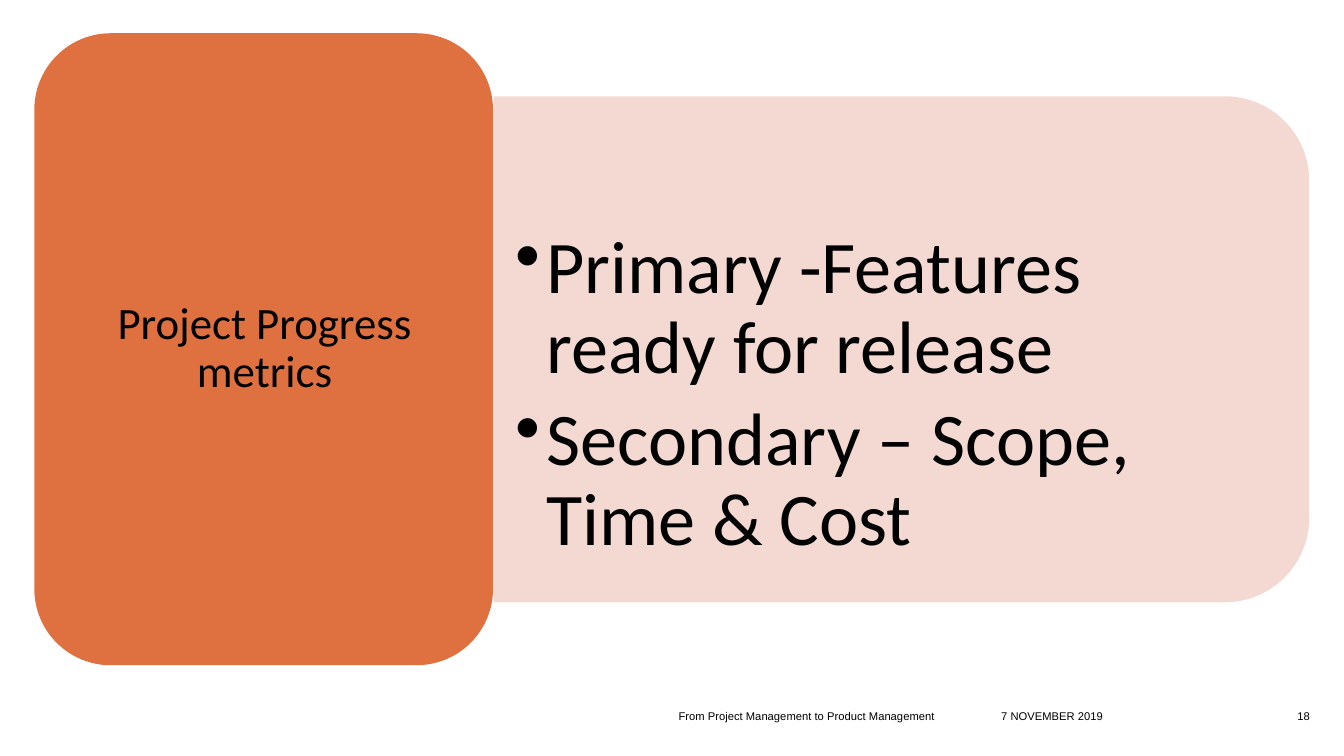
"""Build the project progress metrics slide."""
from lxml.etree import SubElement
from pptx import Presentation
from pptx.dml.color import RGBColor
from pptx.enum.shapes import MSO_SHAPE
from pptx.enum.text import MSO_ANCHOR, PP_ALIGN
from pptx.oxml.ns import qn
from pptx.util import Inches, Pt

ORANGE = RGBColor(0xDF, 0x71, 0x40)
PINK = RGBColor(0xF3, 0xD5, 0xCF)
BLACK = RGBColor(0, 0, 0)


def add_panel(kind, left, top, width, height, color):
    panel = slide.shapes.add_shape(
        kind, Inches(left), Inches(top), Inches(width), Inches(height))
    panel.shadow.inherit = False
    panel.fill.solid()
    panel.fill.fore_color.rgb = color
    panel.line.fill.background()
    return panel


def add_text(lines, box, insets, anchor, align, size, font, line_spacing=1.0,
             space_after=0, bullet_indent=None):
    shape = slide.shapes.add_textbox(*[Inches(value) for value in box])
    frame = shape.text_frame
    frame.word_wrap = True
    frame.vertical_anchor = anchor
    (frame.margin_left, frame.margin_top,
     frame.margin_right, frame.margin_bottom) = [Inches(value) for value in insets]
    for index, line in enumerate(lines):
        paragraph = frame.add_paragraph() if index else frame.paragraphs[0]
        paragraph.alignment = align
        paragraph.line_spacing = line_spacing
        paragraph.space_after = Pt(space_after)
        if bullet_indent:
            properties = paragraph._p.get_or_add_pPr()
            properties.set("marL", str(Inches(bullet_indent)))
            properties.set("indent", str(-Inches(bullet_indent)))
            SubElement(properties, qn("a:buChar"), char="•")
        run = paragraph.add_run()
        run.text = line
        run.font.size = Pt(size)
        run.font.name = font
        run.font.color.rgb = BLACK


presentation = Presentation()
presentation.slide_width = Inches(13.33)
presentation.slide_height = Inches(7.5)
slide = presentation.slides.add_slide(presentation.slide_layouts[6])

detail_panel = add_panel(MSO_SHAPE.ROUND_2_SAME_RECTANGLE, 6.43, -0.58, 5.02, 8.09, PINK)
detail_panel.rotation = 90
SubElement(detail_panel.fill.fore_color._xFill.find(qn("a:srgbClr")),
           qn("a:alpha"), val="90000")
add_text(["Primary -Features ready for release", "Secondary – Scope, Time & Cost"],
         (4.89, 1.2, 7.85, 4.53), (0.22, 1.03, 0.22, 0.11), MSO_ANCHOR.MIDDLE,
         PP_ALIGN.LEFT, 53, "Calibri", 0.9, 8, 0.31)

add_panel(MSO_SHAPE.ROUNDED_RECTANGLE, 0.34, 0.33, 4.55, 6.27, ORANGE)
add_text(["Project Progress metrics"], (0.57, 0.55, 4.11, 5.83),
         (0.13, 0.07, 0.13, 0.07), MSO_ANCHOR.MIDDLE, PP_ALIGN.CENTER, 32, "Calibri", 0.9)

for label, left, width, align in [
    ("7 NOVEMBER 2019", 9.93, 1.99, PP_ALIGN.LEFT),
    ("From Project Management to Product Management", 6.73, 3.06, PP_ALIGN.LEFT),
    ("18", 12.54, 0.45, PP_ALIGN.RIGHT),
]:
    add_text([label], (left, 6.95, width, 0.22), (0, 0, 0, 0),
             MSO_ANCHOR.BOTTOM, align, 8, "Arial")

presentation.save("out.pptx")
